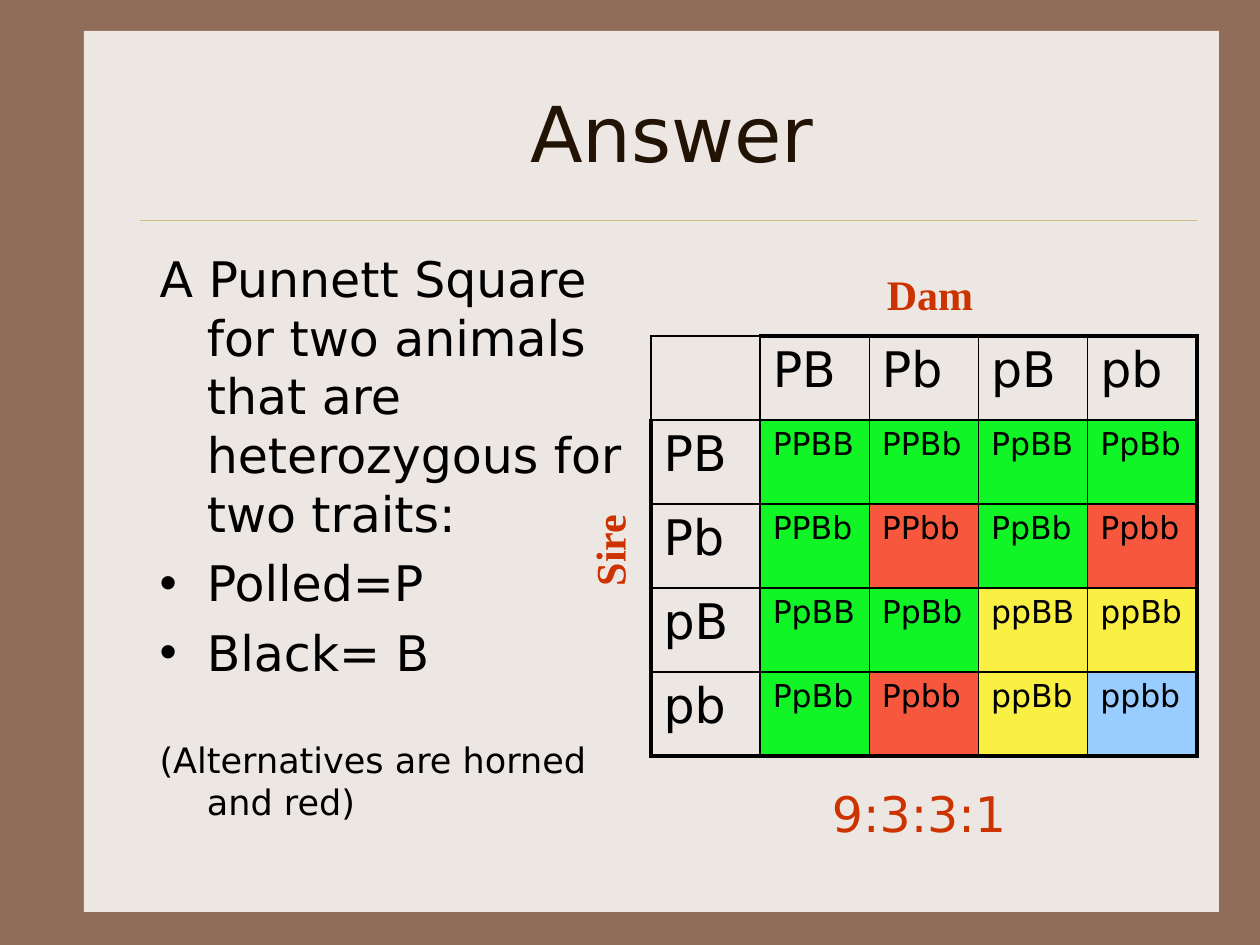
from dataclasses import dataclass
from lxml.etree import SubElement
from pptx import Presentation
from pptx.dml.color import RGBColor
from pptx.enum.shapes import MSO_CONNECTOR, MSO_SHAPE
from pptx.enum.text import MSO_ANCHOR, MSO_AUTO_SIZE, PP_ALIGN
from pptx.oxml import parse_xml
from pptx.oxml.ns import nsdecls, qn
from pptx.util import Pt

SCALE = 914400 / 126


@dataclass(frozen=True)
class Theme:
    edge: str = "906D58"
    panel: str = "EDE7E3"
    rule: str = "CBBD83"
    title: str = "221304"
    ink: str = "000000"
    accent: str = "CC3300"
    sans: str = "DejaVu Sans"
    serif: str = "Times New Roman"
    head: int = 44
    large: int = 28
    label: int = 24
    note: int = 20
    small: int = 18
    thin: float = 1
    thick: float = 2.25


THEME = Theme()
GAMETES = ["PB", "Pb", "pB", "pb"]
FILLS = {
    (True, True): "11F527",
    (True, False): "F7583D",
    (False, True): "F9F043",
    (False, False): "99CCFF",
}


def px(*sizes):
    return [round(size * SCALE) for size in sizes]


def paint(fill, color):
    fill.solid()
    fill.fore_color.rgb = RGBColor.from_string(color)


def style(font, size, color=THEME.ink, name=THEME.sans, bold=False):
    values = {"size": Pt(size), "name": name, "bold": bold}
    for key, value in values.items():
        setattr(font, key, value)
    font.color.rgb = RGBColor.from_string(color)


def place(shape, box):
    for key, value in zip(("left", "top", "width", "height"), px(*box)):
        setattr(shape, key, value)


def add_panel(slide, box):
    panel = slide.shapes.add_shape(MSO_SHAPE.RECTANGLE, *px(*box))
    panel.shadow.inherit = False
    paint(panel.fill, THEME.panel)
    panel.line.fill.background()
    slide.shapes._spTree.insert(2, panel._element)


def add_rule(slide, ends):
    rule = slide.shapes.add_connector(MSO_CONNECTOR.STRAIGHT, *px(*ends))
    rule.line.width = Pt(0.25)
    rule.line.color.rgb = RGBColor.from_string(THEME.rule)
    SubElement(rule._element.spPr, qn("a:effectLst"))


def add_title(slide, text, box):
    title = slide.shapes.title
    place(title, box)
    frame = title.text_frame
    frame.text = text
    frame.vertical_anchor = MSO_ANCHOR.MIDDLE
    frame.paragraphs[0].alignment = PP_ALIGN.CENTER
    style(frame.paragraphs[0].font, THEME.head, THEME.title)


def add_body(slide, items, box):
    body = slide.placeholders[1]
    place(body, box)
    frame = body.text_frame
    frame.auto_size = MSO_AUTO_SIZE.NONE
    frame.text = "\n".join(text for text, *_ in items)
    for para, (_, size, gap, bullet) in zip(frame.paragraphs, items):
        para.space_before = Pt(gap)
        if not bullet:
            SubElement(para._p.get_or_add_pPr(), qn("a:buNone"))
        style(para.font, size)


def add_label(slide, text, box, size, name, bold=False, turn=0):
    label = slide.shapes.add_textbox(*px(*box))
    label.rotation = turn
    frame = label.text_frame
    frame.word_wrap = True
    frame.auto_size = MSO_AUTO_SIZE.SHAPE_TO_FIT_TEXT
    frame.text = text
    frame.paragraphs[0].alignment = PP_ALIGN.CENTER
    style(frame.paragraphs[0].font, size, THEME.accent, name, bold)


def add_edges(cell, heavy):
    props = cell._tc.get_or_add_tcPr()
    for spot, side in enumerate("LRTB"):
        width = Pt(THEME.thick if side in heavy else THEME.thin)
        line = parse_xml(
            f'<a:ln{side} {nsdecls("a")} w="{width}"><a:solidFill>'
            f'<a:srgbClr val="{THEME.ink}"/></a:solidFill></a:ln{side}>'
        )
        props.insert(spot, line)


def cross(sire, dam):
    return "".join("".join(sorted(pair)) for pair in zip(sire, dam))


def fill_cell(cell, row, col):
    inner = row > 0 and col > 0
    if inner:
        text = cross(GAMETES[row - 1], GAMETES[col - 1])
        paint(cell.fill, FILLS["P" in text, "B" in text])
    else:
        text = GAMETES[row + col - 1] if row + col else ""
        cell.fill.background()
    cell.text = text
    style(cell.text_frame.paragraphs[0].font, THEME.small if inner else THEME.large)
    last = len(GAMETES)
    sides = {
        "L": col == 0 < row,
        "R": col == last,
        "T": row == 0 < col,
        "B": row == last,
    }
    add_edges(cell, [side for side, heavy in sides.items() if heavy])


def add_square(slide, box):
    count = len(GAMETES) + 1
    table = slide.shapes.add_table(count, count, *px(*box)).table
    table.first_row = table.horz_banding = False
    for row in range(count):
        for col in range(count):
            fill_cell(table.cell(row, col), row, col)


def main():
    deck = Presentation()
    deck.slide_width, deck.slide_height = px(1260, 945)
    slide = deck.slides.add_slide(deck.slide_layouts[1])
    paint(slide.background.fill, THEME.edge)
    add_panel(slide, (84, 31, 1135, 881))
    add_rule(slide, (140, 220, 1197, 220))
    add_title(slide, "Answer", (147, 53, 1050, 157))
    items = [
        ("A Punnett Square for two animals that are heterozygous for two traits:",
         THEME.large, 0, False),
        ("Polled=P", THEME.large, 6, True),
        ("Black= B", THEME.large, 6, True),
        ("(Alternatives are horned and red)", THEME.note, 33, False),
    ]
    add_body(slide, items, (147, 242, 514, 620))
    add_square(slide, (651, 336, 546, 420))
    add_label(slide, "Dam", (725, 262, 410, 63), THEME.label, THEME.serif, True)
    add_label(slide, "Sire", (404, 519, 410, 63), THEME.label, THEME.serif, True, 270)
    add_label(slide, "9:3:3:1", (651, 777, 536, 72), THEME.large, THEME.sans)
    deck.save("out.pptx")


if __name__ == "__main__":
    main()
